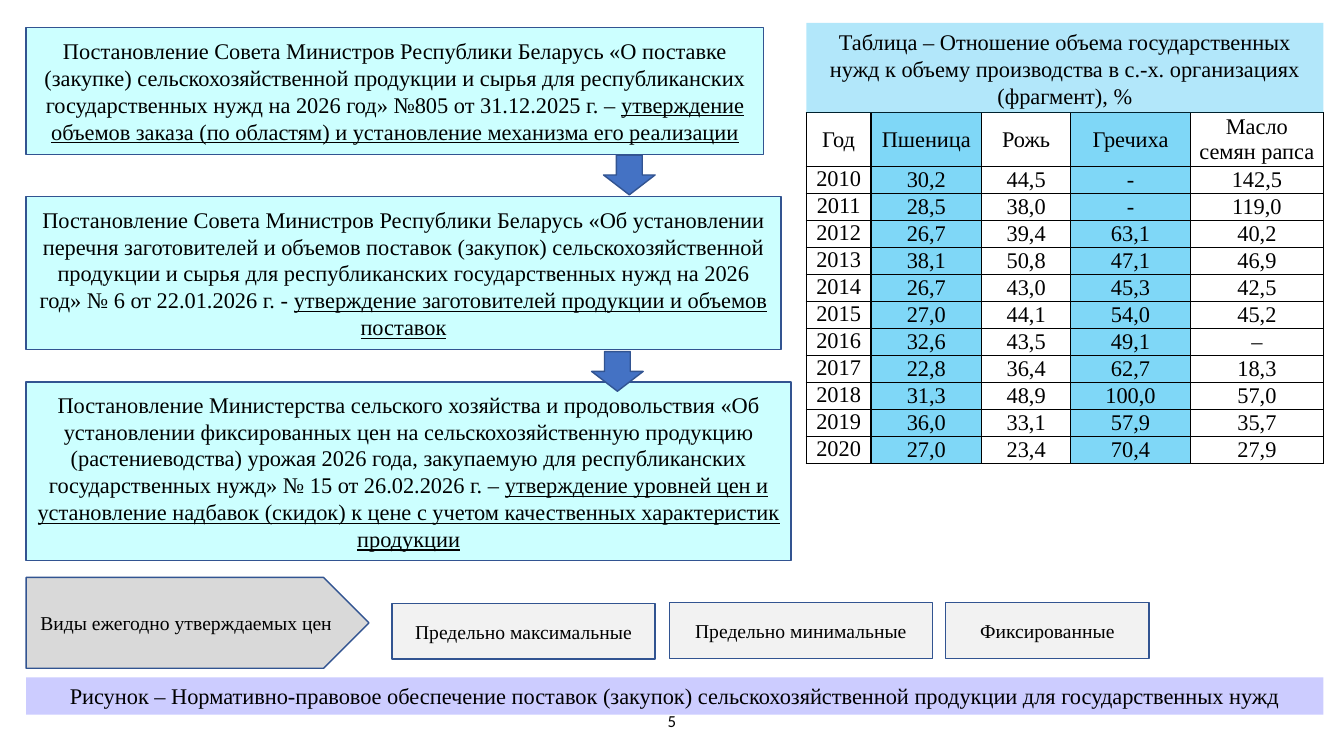
import pptx
import pptx.dml.color
import pptx.enum.shapes
import pptx.enum.text
import pptx.oxml
import pptx.oxml.ns
import pptx.util

Cm = pptx.util.Cm
Pt = pptx.util.Pt
SHAPE = pptx.enum.shapes.MSO_SHAPE
ANCHOR = pptx.enum.text.MSO_ANCHOR
CENTER = pptx.enum.text.PP_ALIGN.CENTER
NS = pptx.oxml.ns.nsdecls("a")

LEFT = 0.66
TABLE_LEFT = 20.32
TABLE_WIDTH = 13.03

DECREES = [
    (0.69, 18.59, 3.2,
     "Постановление Совета Министров Республики Беларусь «О поставке (закупке) "
     "сельскохозяйственной продукции и сырья для республиканских государственных "
     "нужд на 2026 год» №805 от 31.12.2025 г. – ",
     "утверждение объемов заказа (по областям) и установление механизма его реализации"),
    (4.95, 19.02, 3.86,
     "Постановление Совета Министров Республики Беларусь «Об установлении перечня "
     "заготовителей и объемов поставок (закупок) сельскохозяйственной продукции и "
     "сырья для республиканских государственных нужд на 2026 год» № 6 от 22.01.2026 г. - ",
     "утверждение заготовителей продукции и объемов поставок"),
    (9.63, 19.28, 4.5,
     "Постановление Министерства сельского хозяйства и продовольствия «Об установлении "
     "фиксированных цен на сельскохозяйственную продукцию (растениеводства) урожая "
     "2026 года, закупаемую для республиканских государственных нужд» № 15 от "
     "26.02.2026 г. – ",
     "утверждение уровней цен и установление надбавок (скидок) к цене с учетом "
     "качественных характеристик продукции"),
]
ARROWS = [(15.21, 3.91), (14.91, 8.86)]
PRICE_KINDS = [
    (9.88, 15.21, 6.63, "Предельно максимальные"),
    (16.87, 15.19, 6.63, "Предельно минимальные"),
    (23.83, 15.19, 5.13, "Фиксированные"),
]
COLUMN_WIDTHS = [1.63, 2.79, 2.24, 3.02, 3.35]
SHARES = [
    ["Год", "Пшеница", "Рожь", "Гречиха", "Масло семян рапса"],
    ["2010", "30,2", "44,5", "-", "142,5"],
    ["2011", "28,5", "38,0", "-", "119,0"],
    ["2012", "26,7", "39,4", "63,1", "40,2"],
    ["2013", "38,1", "50,8", "47,1", "46,9"],
    ["2014", "26,7", "43,0", "45,3", "42,5"],
    ["2015", "27,0", "44,1", "54,0", "45,2"],
    ["2016", "32,6", "43,5", "49,1", "–"],
    ["2017", "22,8", "36,4", "62,7", "18,3"],
    ["2018", "31,3", "48,9", "100,0", "57,0"],
    ["2019", "36,0", "33,1", "57,9", "35,7"],
    ["2020", "27,0", "23,4", "70,4", "27,9"],
]


def rgb(color):
    return pptx.dml.color.RGBColor.from_string(color)


class Deck:
    """Draws styled elements on the current slide."""

    font = "Times New Roman"
    ink = "000000"
    outline = "325491"

    def __init__(self, width, height):
        self.prs = pptx.Presentation()
        self.prs.slide_width, self.prs.slide_height = Cm(width), Cm(height)
        self.s = self.prs.slides.add_slide(self.prs.slide_layouts[6])

    def style(self, p, size, font=None):
        p.alignment = CENTER
        p.font.size = Pt(size)
        p.font.name = font or self.font
        p.font.color.rgb = rgb(self.ink)

    def paint(self, fill, props, color, alpha=100):
        fill.solid()
        fill.fore_color.rgb = rgb(color)
        if alpha < 100:
            clr = props.xpath("./a:solidFill/a:srgbClr")[0]
            clr.append(pptx.oxml.parse_xml(f'<a:alpha {NS} val="{alpha * 1000}"/>'))

    def shape(self, kind, x, y, w, h, color, text="", underlined="", size=16,
              alpha=100, outlined=True, anchor=ANCHOR.MIDDLE):
        sp = self.s.shapes.add_shape(kind, Cm(x), Cm(y), Cm(w), Cm(h))
        sp.shadow.inherit = False
        self.paint(sp.fill, sp._element.spPr, color, alpha)
        if outlined:
            sp.line.color.rgb = rgb(self.outline)
            sp.line.width = Pt(1)
        else:
            sp.line.fill.background()
        tf = sp.text_frame
        tf.word_wrap = True
        tf.vertical_anchor = anchor
        p = tf.paragraphs[0]
        self.style(p, size)
        if text:
            p.add_run().text = text
        if underlined:
            r = p.add_run()
            r.text = underlined
            r.font.underline = True

    def page_number(self, x, y, w, h, number):
        tf = self.s.shapes.add_textbox(Cm(x), Cm(y), Cm(w), Cm(h)).text_frame
        tf.word_wrap = True
        tf.vertical_anchor = ANCHOR.MIDDLE
        p = tf.paragraphs[0]
        p.text = number
        self.style(p, 12, "Calibri")

    def borders(self, tc_pr):
        for side in ("lnL", "lnR", "lnT", "lnB"):
            tc_pr.append(pptx.oxml.parse_xml(
                f'<a:{side} {NS} w="12700"><a:solidFill><a:srgbClr val="{self.ink}"/>'
                f'</a:solidFill></a:{side}>'))

    def table(self, x, y, widths, heights, rows):
        frame = self.s.shapes.add_table(len(rows), len(widths), Cm(x), Cm(y),
                                        Cm(sum(widths)), Cm(sum(heights)))
        tbl = frame.table
        tbl.first_row = tbl.horz_banding = False
        for column, width in zip(tbl.columns, widths):
            column.width = Cm(width)
        for i, (height, values) in enumerate(zip(heights, rows)):
            tbl.rows[i].height = Cm(height)
            for j, value in enumerate(values):
                cell = tbl.cell(i, j)
                cell.margin_left = cell.margin_right = Cm(0.18)
                cell.margin_top = cell.margin_bottom = 0
                cell.vertical_anchor = ANCHOR.TOP if i and j == 0 else ANCHOR.MIDDLE
                tc_pr = cell._tc.get_or_add_tcPr()
                self.borders(tc_pr)
                self.paint(cell.fill, tc_pr, "00B0F0" if j % 2 else "FFFFFF", 50)
                p = cell.text_frame.paragraphs[0]
                p.text = value
                self.style(p, 16)


def main():
    deck = Deck(33.87, 19.05)
    deck.page_number(11.22, 17.65, 11.43, 1.02, "5")
    for y, w, h, text, purpose in DECREES:
        deck.shape(SHAPE.RECTANGLE, LEFT, y, w, h, "CCFFFF", text, purpose)
    deck.shape(SHAPE.RECTANGLE, LEFT, 17.07, 32.69, 0.94, "CCCCFF",
               "Рисунок – Нормативно-правовое обеспечение поставок (закупок) "
               "сельскохозяйственной продукции для государственных нужд",
               outlined=False, anchor=ANCHOR.TOP)
    for x, y in ARROWS:
        deck.shape(SHAPE.DOWN_ARROW, x, y, 1.3, 1, "4472C4")
    deck.shape(SHAPE.PENTAGON, LEFT, 14.55, 8.64, 2.29, "D9D9D9",
               "Виды ежегодно утверждаемых цен", size=14)
    for x, y, w, text in PRICE_KINDS:
        deck.shape(SHAPE.RECTANGLE, x, y, w, 1.4, "F2F2F2", text, size=14)
    heights = [1.35] + [0.68] * (len(SHARES) - 1)
    deck.table(TABLE_LEFT, 2.84, COLUMN_WIDTHS, heights, SHARES)
    deck.shape(SHAPE.RECTANGLE, TABLE_LEFT, 0.58, TABLE_WIDTH, 2.26, "00B0F0",
               "Таблица – Отношение объема государственных нужд к объему "
               "производства в с.-х. организациях (фрагмент), %",
               alpha=30, outlined=False, anchor=ANCHOR.TOP)
    deck.prs.save("out.pptx")


if __name__ == "__main__":
    main()
